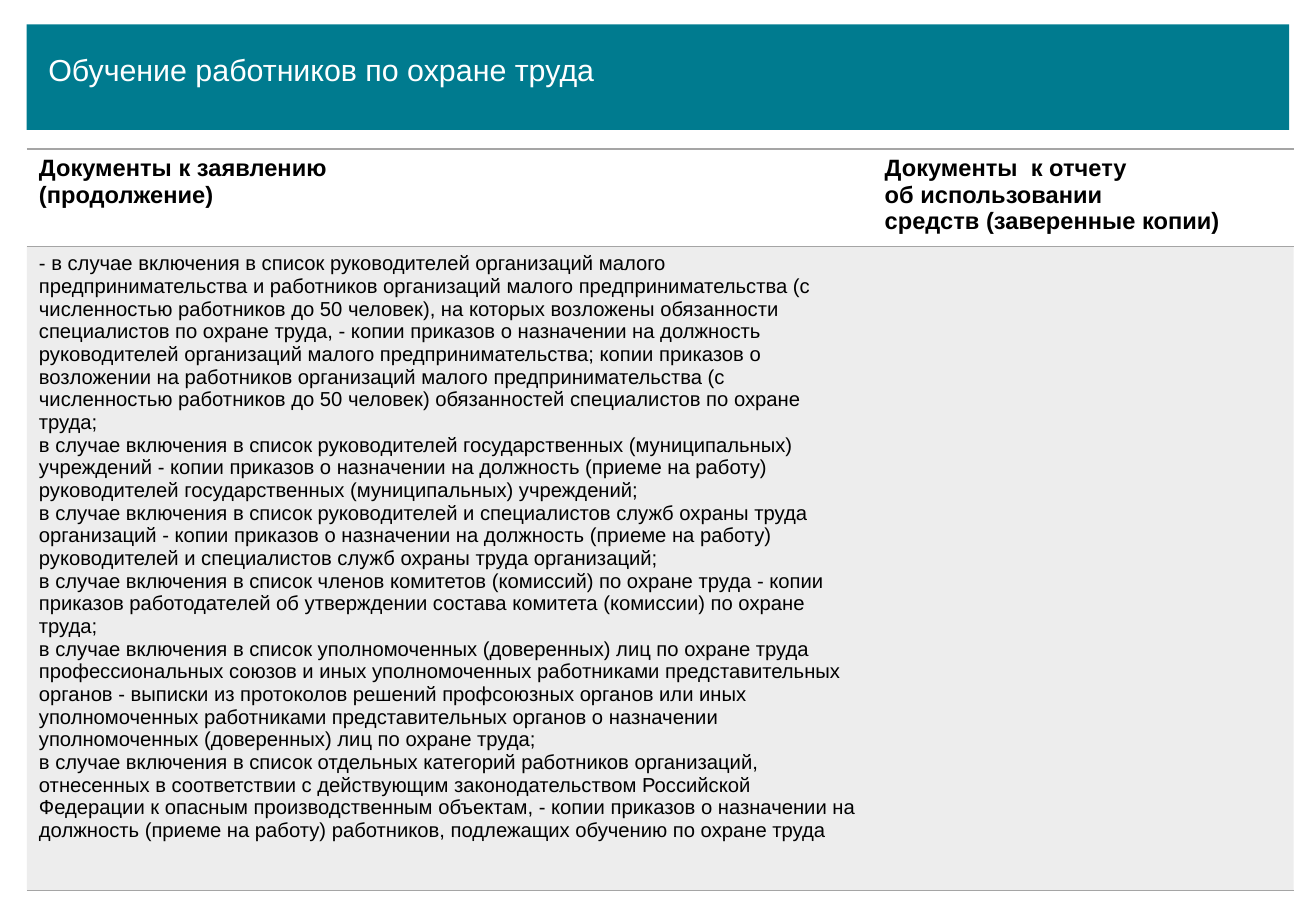
from copy import deepcopy

from lxml.etree import SubElement
from pptx import Presentation
from pptx.dml.color import RGBColor
from pptx.enum.shapes import MSO_SHAPE
from pptx.oxml.ns import qn
from pptx.util import Cm, Pt

COLORS = {"teal": "007B8F", "gray": "A5A5A5", "white": "FFFFFF", "black": "000000"}

TITLE_FMT = {"name": "Arial", "size": Pt(18), "bold": False}
HEAD_FMT = {"name": "Arial", "size": Pt(14), "bold": True}
BODY_FMT = {"name": "Arial", "size": Pt(12), "bold": False}

NO_STYLE_NO_GRID = "{2D5ABB26-0587-4C30-8999-92F81FD0307C}"

TITLE = "Обучение работников по охране труда"
HEADERS = [
    ["Документы к заявлению", "(продолжение)"],
    ["Документы  к отчету\vоб использовании", "средств (заверенные копии)"],
]
DOCUMENTS = [
    "- в случае включения в список руководителей организаций малого предпринимательства "
    "и работников организаций малого предпринимательства (с численностью работников до 50 "
    "человек), на которых возложены обязанности специалистов по охране труда, - копии "
    "приказов о назначении на должность руководителей организаций малого "
    "предпринимательства; копии приказов о возложении на работников организаций малого "
    "предпринимательства (с численностью работников до 50 человек) обязанностей "
    "специалистов по охране труда;",
    "в случае включения в список руководителей государственных (муниципальных) учреждений "
    "- копии приказов о назначении на должность (приеме на работу) руководителей "
    "государственных (муниципальных) учреждений;",
    "в случае включения в список руководителей и специалистов служб охраны труда "
    "организаций - копии приказов о назначении на должность (приеме на работу) "
    "руководителей и специалистов служб охраны труда организаций;",
    "в случае включения в список членов комитетов (комиссий) по охране труда - копии "
    "приказов работодателей об утверждении состава комитета (комиссии) по охране труда;",
    "в случае включения в список уполномоченных (доверенных) лиц по охране труда "
    "профессиональных союзов и иных уполномоченных работниками представительных органов "
    "- выписки из протоколов решений профсоюзных органов или иных уполномоченных "
    "работниками представительных органов о назначении уполномоченных (доверенных) лиц "
    "по охране труда;",
    "в случае включения в список отдельных категорий работников организаций, отнесенных "
    "в соответствии с действующим законодательством Российской Федерации к опасным "
    "производственным объектам, - копии приказов о назначении на должность (приеме на "
    "работу) работников, подлежащих обучению по охране труда",
]


def rgb(name):
    """Return the named colour."""
    return RGBColor.from_string(COLORS[name])


def write(tf, paragraphs, fmt, color):
    """Fill a text frame with formatted paragraphs."""
    for i, text in enumerate(paragraphs):
        p = tf.paragraphs[0] if i == 0 else tf.add_paragraph()
        p.text = text
        for r in p.runs:
            for key, value in fmt.items():
                setattr(r.font, key, value)
            r.font.color.rgb = rgb(color)
        for br in p._p.findall(qn("a:br")):
            br.append(deepcopy(p.runs[0]._r.rPr))


def add_banner(s):
    """Draw the coloured band behind the title."""
    sp = s.shapes.add_shape(MSO_SHAPE.RECTANGLE, Cm(0.56), Cm(0.51), Cm(26.39), Cm(2.21))
    sp.shadow.inherit = False
    sp.fill.solid()
    sp.fill.fore_color.rgb = rgb("teal")
    sp.line.fill.background()


def add_title(s):
    """Place the slide title on the band."""
    tf = s.shapes.add_textbox(Cm(0.76), Cm(0.94), Cm(12.57), Cm(1.8)).text_frame
    tf.word_wrap = True
    write(tf, [TITLE], TITLE_FMT, "white")


def add_border(cell, side):
    """Draw a thin gray line on one side of a cell."""
    ln = SubElement(cell._tc.get_or_add_tcPr(), qn(f"a:ln{side}"), w=str(Pt(1)))
    SubElement(SubElement(ln, qn("a:solidFill")), qn("a:srgbClr"), val=COLORS["gray"])


def shade(cell):
    """Fill a cell with translucent gray."""
    cell.fill.solid()
    cell.fill.fore_color.rgb = rgb("gray")
    clr = cell._tc.tcPr.find(qn("a:solidFill")).find(qn("a:srgbClr"))
    SubElement(clr, qn("a:alpha"), val="20000")


def add_documents_table(s):
    """Build the table of required documents."""
    widths, heights = [Cm(17.68), Cm(8.8)], [Cm(2.03), Cm(13.46)]
    frame = s.shapes.add_table(2, 2, Cm(0.56), Cm(3.12), sum(widths), sum(heights))
    table = frame.table
    table.first_row = table.horz_banding = False
    table._tbl.tblPr.find(qn("a:tableStyleId")).text = NO_STYLE_NO_GRID
    for i, (width, height) in enumerate(zip(widths, heights)):
        table.columns[i].width = width
        table.rows[i].height = height
    for i, header in enumerate(HEADERS):
        head, body = table.cell(0, i), table.cell(1, i)
        write(head.text_frame, header, HEAD_FMT, "black")
        for cell, sides in ((head, "TB"), (body, "TB")):
            for side in sides:
                add_border(cell, side)
        head.fill.background()
        shade(body)
    write(table.cell(1, 0).text_frame, DOCUMENTS, BODY_FMT, "black")


def main():
    """Create the slide and save it."""
    prs = Presentation()
    prs.slide_width, prs.slide_height = Cm(27.51), Cm(19.05)
    s = prs.slides.add_slide(prs.slide_layouts[6])
    add_banner(s)
    add_title(s)
    add_documents_table(s)
    prs.save("out.pptx")


if __name__ == "__main__":
    main()
